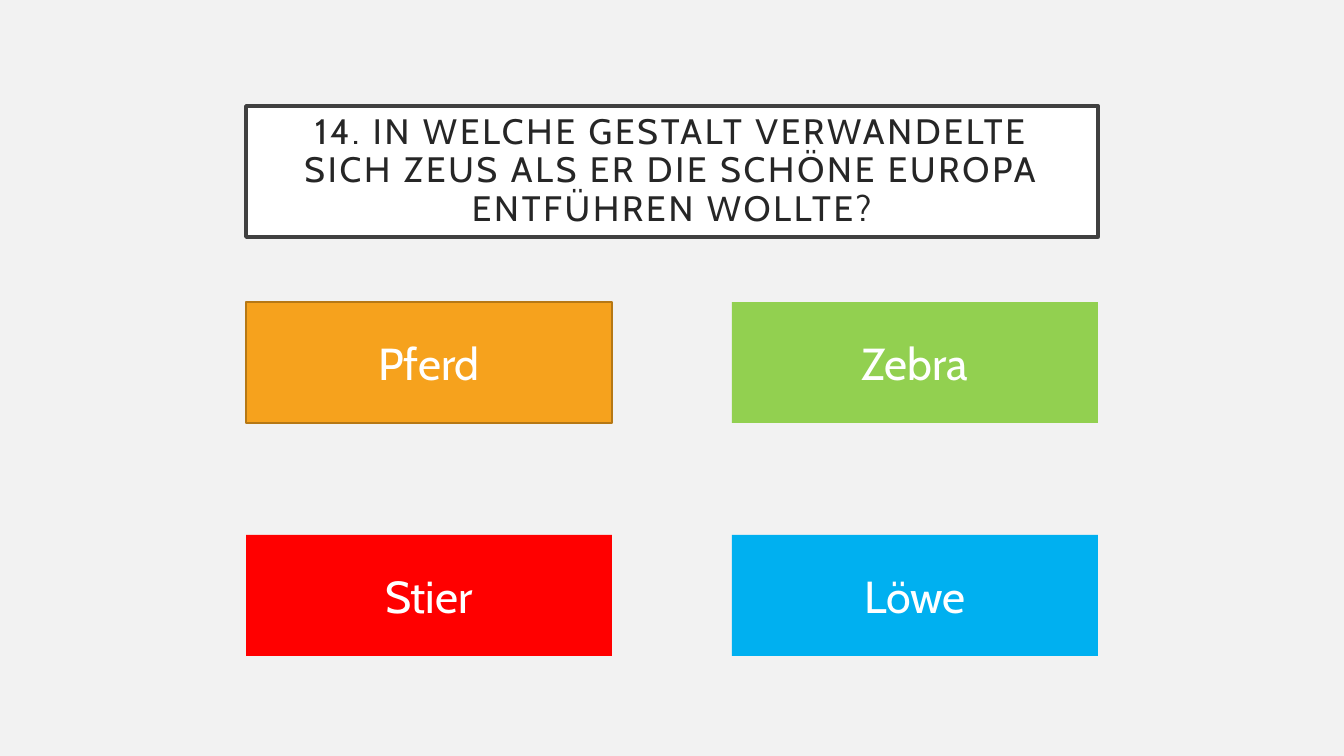
from pptx import Presentation
from pptx.dml.color import RGBColor
from pptx.enum.shapes import MSO_SHAPE
from pptx.enum.text import MSO_ANCHOR, PP_ALIGN
from pptx.util import Pt

RECT = MSO_SHAPE.RECTANGLE
MIDDLE = MSO_ANCHOR.MIDDLE
CENTER = PP_ALIGN.CENTER
EMU_PER_PX = 914400 / 100.8
FONT = "Cabin"
QUESTION = "14. IN WELCHE GESTALT VERWANDELTE SICH ZEUS ALS ER DIE SCHÖNE EUROPA ENTFÜHREN WOLLTE?"
ANSWERS = [
    ("Pferd", "F6A21D", "B67815"),
    ("Zebra", "92D050", None),
    ("Stier", "FF0000", None),
    ("Löwe", "00B0F0", None),
]


def px(n):
    """Convert pixels to EMU."""
    return round(n * EMU_PER_PX)


def rgb(value):
    """Turn a hex string into a colour."""
    return RGBColor.from_string(value)


def add_box(slide, box, text, size, color, fill, line=None, line_width=1):
    """Add a filled rectangle with centred text and return it."""
    s = slide.shapes.add_shape(RECT, *(px(n) for n in box))
    s.shadow.inherit = False
    s.fill.solid()
    s.fill.fore_color.rgb = rgb(fill)
    if line:
        s.line.color.rgb = rgb(line)
        s.line.width = Pt(line_width)
    else:
        s.line.fill.background()
    tf = s.text_frame
    tf.word_wrap = True
    tf.vertical_anchor = MIDDLE
    p = tf.paragraphs[0]
    p.alignment = CENTER
    p.font.name = FONT
    p.font.size = Pt(size)
    p.font.color.rgb = rgb(color)
    p.add_run().text = text
    return s


def add_question(slide, box):
    """Add the framed question with wide letter spacing."""
    tf = add_box(slide, box, QUESTION, 25.2, "262626", "FFFFFF", "404040", 2.5).text_frame
    tf.margin_left = tf.margin_right = tf.margin_top = tf.margin_bottom = px(20)
    p = tf.paragraphs[0]
    p.line_spacing = 0.9
    p.runs[0].font._element.set("spc", "200")


def add_answers(slide, box, width=366, height=121):
    """Place the answers in two columns that fill the box."""
    x, y, w, h = box
    for i, (text, fill, line) in enumerate(ANSWERS):
        row, col = divmod(i, 2)
        cell = (x + col * (w - width), y + row * (h - height), width, height)
        add_box(slide, cell, text, 32, "FFFFFF", fill, line)


def main():
    """Build the quiz slide and save it."""
    prs = Presentation()
    prs.slide_width, prs.slide_height = px(1344), px(756)
    slide = prs.slides.add_slide(prs.slide_layouts[6])
    slide.background.fill.solid()
    slide.background.fill.fore_color.rgb = rgb("F2F2F2")
    add_question(slide, (246, 106, 852, 131))
    add_answers(slide, (246, 302, 852, 354))
    prs.save("out.pptx")


if __name__ == "__main__":
    main()
